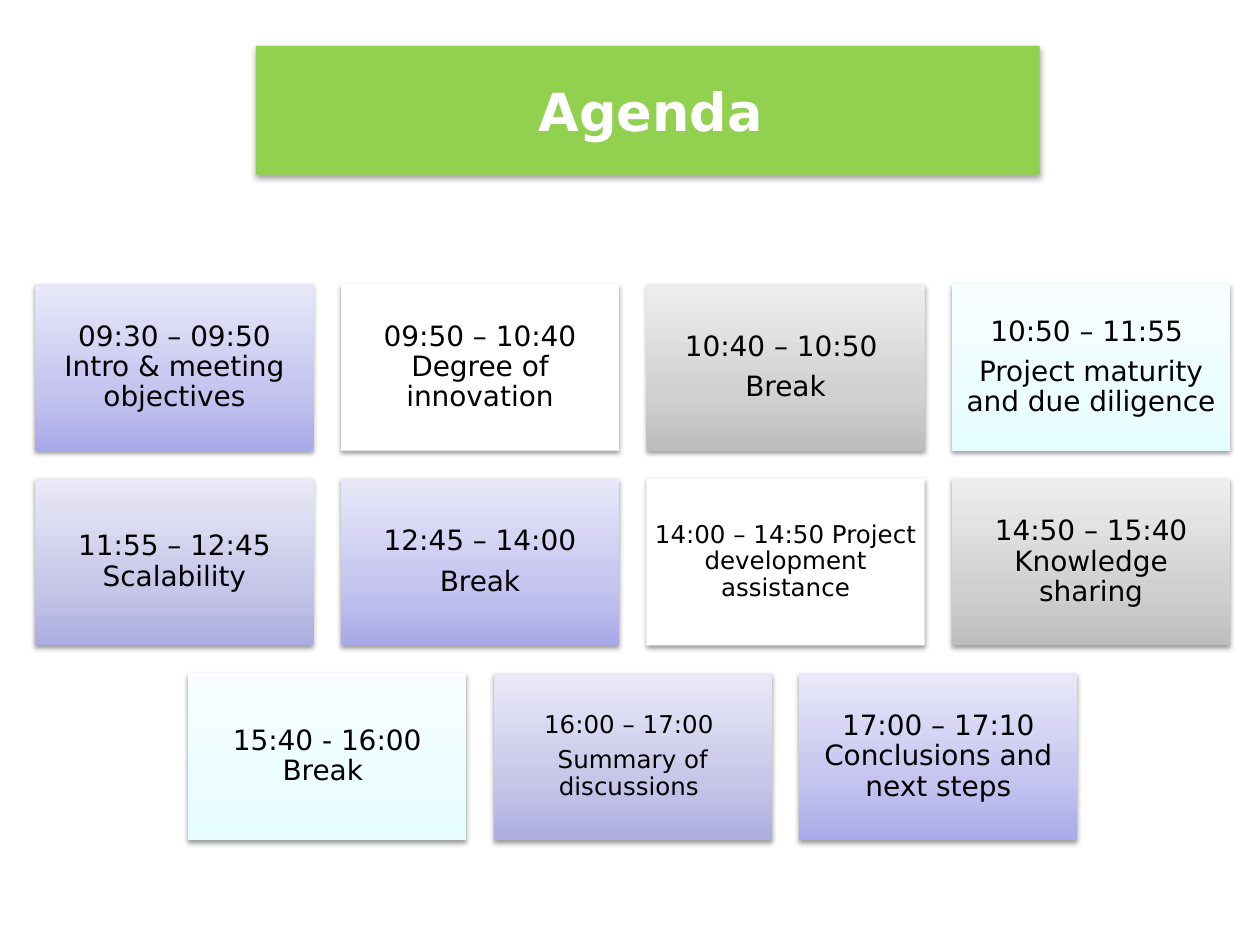
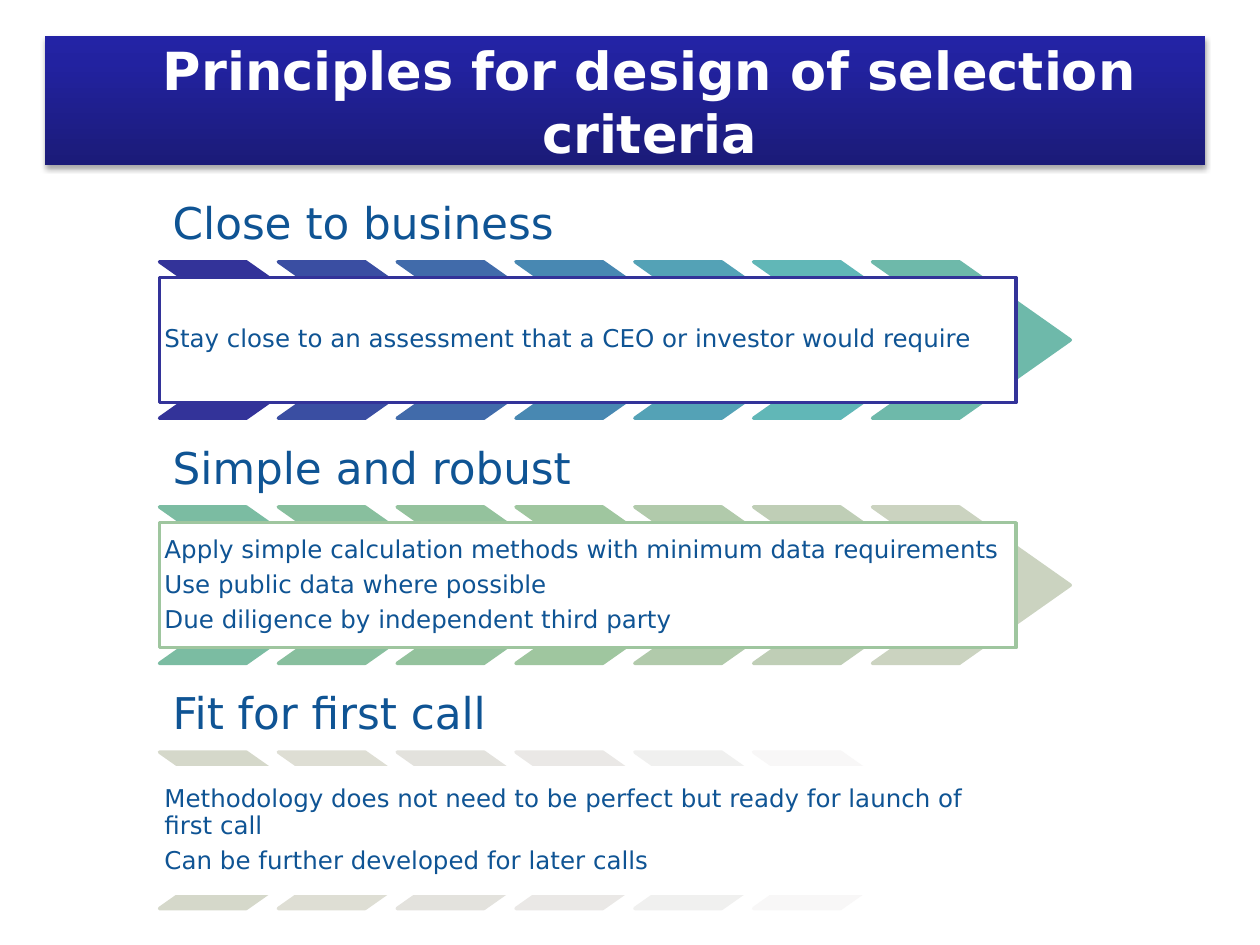
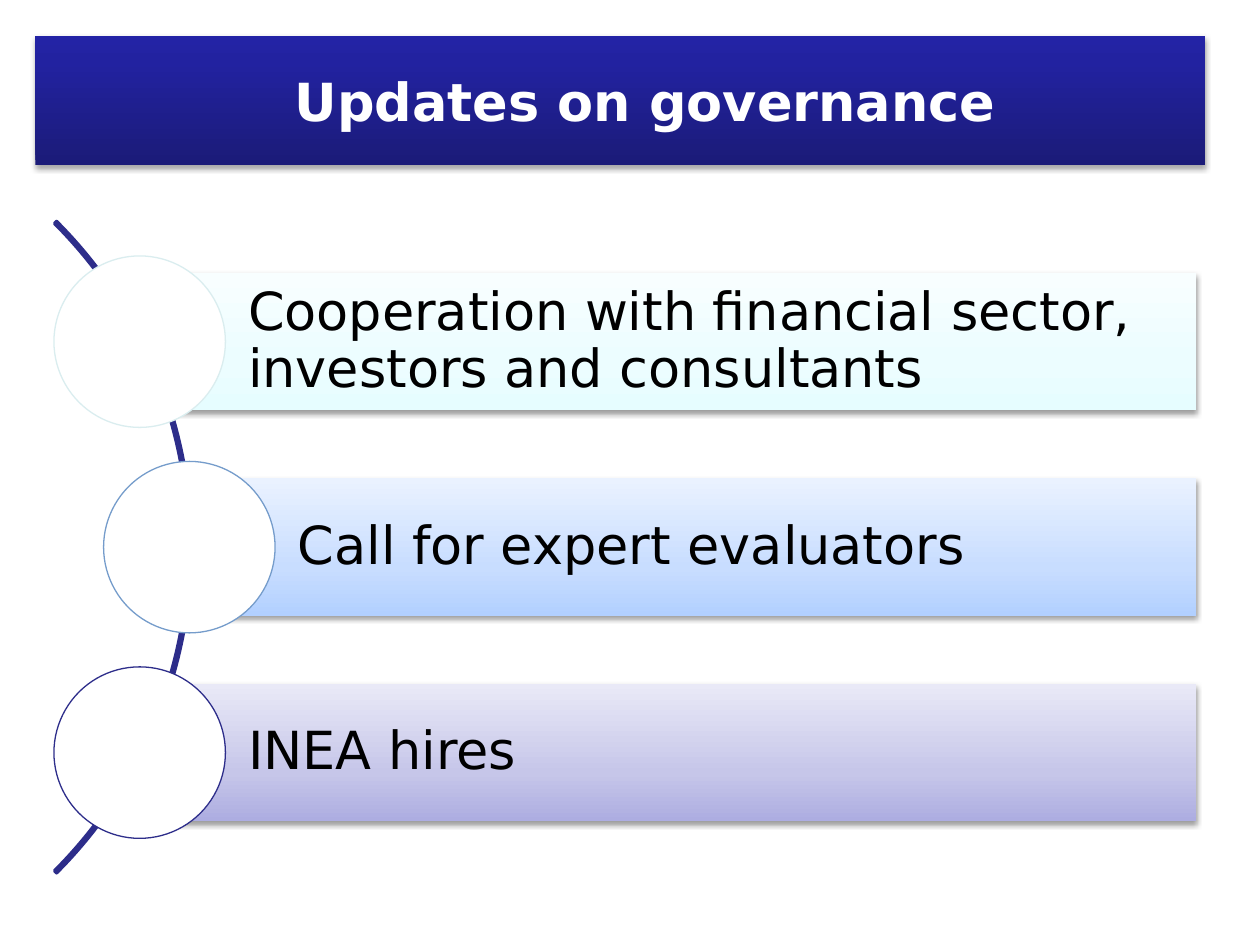
from pptx import Presentation
from pptx.dml.color import RGBColor
from pptx.enum.shapes import MSO_SHAPE as SHAPE
from pptx.enum.text import MSO_ANCHOR as ANCHOR, PP_ALIGN as ALIGN
from pptx.oxml import parse_xml
from pptx.oxml.ns import nsdecls, qn
from pptx.util import Pt

FONT = "DejaVu Sans"
WHITE = RGBColor(0xFF, 0xFF, 0xFF)
BLACK = RGBColor(0x00, 0x00, 0x00)
GREEN = RGBColor(0x92, 0xD0, 0x50)
TEXT_BLUE = RGBColor(0x0F, 0x54, 0x94)
ARC_BLUE = RGBColor(0x2D, 0x2D, 0x8A)
PALE_TEAL = RGBColor(0xDA, 0xED, 0xEF)
MID_BLUE = RGBColor(0x75, 0x9C, 0xCB)


def gradient(*stops):
    """Stops of (percent, colour), running from bottom to top."""
    return [(pos, RGBColor.from_string(c)) for pos, c in stops]


NAVY = gradient((0, "1B1B78"), (80, "2222A0"), (100, "2323A5"))
VIOLET = gradient((0, "A9A9E9"), (35, "C4C4EF"), (100, "E8E8FA"))
GREY = gradient((0, "BDBDBD"), (35, "D1D1D1"), (100, "EEEEEE"))
ICE = gradient((0, "E6FDFF"), (35, "ECFDFF"), (100, "F8FEFF"))
LILAC = gradient((0, "ADADE1"), (35, "C6C6E9"), (100, "E9E9F7"))
SKY = gradient((0, "B2D0FF"), (35, "C8DDFF"), (100, "EAF2FF"))

CHEVRON_ROWS = [
    [RGBColor.from_string(c) for c in row.split()] for row in (
        "333399 3A4EA2 416BAA 4888B2 54A2B6 61B7B7 6EB9AA",
        "7BBCA2 88BF9E 94C29D 9FC69F B1CAAB BFCEB6 CBD3C0",
        "D5D8CA DEDED4 E3E2DD EAE8E6 F0F0EF F8F7F7 FFFFFF")]


# Shared helpers
def add_shadow(sp, alpha, dist):
    effects = sp._element.spPr.find(qn("a:effectLst"))
    effects.append(parse_xml(
        f'<a:outerShdw {nsdecls("a")} blurRad="{Pt(3.1)}" dist="{Pt(dist)}" '
        f'dir="5400000" rotWithShape="0"><a:srgbClr val="000000">'
        f'<a:alpha val="{alpha * 1000}"/></a:srgbClr></a:outerShdw>'))


def set_fill(sp, fill):
    if fill is None:
        sp.fill.background()
    elif isinstance(fill, RGBColor):
        sp.fill.solid()
        sp.fill.fore_color.rgb = fill
    else:
        stops = "".join(f'<a:gs pos="{pos * 1000}"><a:srgbClr val="{c}"/></a:gs>'
                        for pos, c in fill)
        sp._element.spPr.find(qn("a:prstGeom")).addnext(parse_xml(
            f'<a:gradFill {nsdecls("a")} rotWithShape="1"><a:gsLst>{stops}</a:gsLst>'
            f'<a:lin ang="16200000" scaled="0"/></a:gradFill>'))


def add_box(slide, kind, box, fill, line=None, width=2):
    sp = slide.shapes.add_shape(kind, *(Pt(v) for v in box))
    set_fill(sp, fill)
    if line is None:
        sp.line.fill.background()
    else:
        sp.line.color.rgb = line
        sp.line.width = Pt(width)
    sp.shadow.inherit = False
    return sp


def write(sp, lines, size, color, inset, left=None, align=ALIGN.LEFT,
          anchor=ANCHOR.MIDDLE, bold=False, spacing=0.9, after=0.35):
    tf = sp.text_frame
    tf.word_wrap = True
    tf.vertical_anchor = anchor
    tf.margin_top = tf.margin_bottom = tf.margin_right = Pt(inset)
    tf.margin_left = Pt(inset if left is None else left)
    for i, line in enumerate(lines):
        p = tf.add_paragraph() if i else tf.paragraphs[0]
        p.text = line
        p.alignment = align
        p.line_spacing = spacing
        p.space_after = Pt(after * size)
        p.font.name, p.font.size, p.font.bold = FONT, Pt(size), bold
        p.font.color.rgb = color


def add_title(slide, text, box, fill, left):
    sp = add_box(slide, SHAPE.RECTANGLE, box, fill)
    add_shadow(sp, 35, 1.8)
    write(sp, [text], 30, WHITE, 3.6, left, ALIGN.CENTER, bold=True,
          spacing=1.0, after=0)


# Agenda: rows of cards, short rows centred
def add_agenda(slide, rows, left, top):
    card_w, card_h, step_x, step_y, columns = 159, 95.3, 174.6, 111.3, 4
    for r, row in enumerate(rows):
        start = left + (columns - len(row)) / 2 * step_x
        for c, (lines, fill, size) in enumerate(row):
            box = (start + c * step_x, top + r * step_y, card_w, card_h)
            sp = add_box(slide, SHAPE.RECTANGLE, box, fill)
            add_shadow(sp, 38, 1.6)
            write(sp, lines, size, BLACK, 0.3 * size, align=ALIGN.CENTER)


# Principle: heading, chevron strip and framed text
def add_principle(slide, heading, lines, colors, frame, left, top):
    sp = slide.shapes.add_textbox(Pt(left), Pt(top), Pt(483), Pt(43.9))
    write(sp, [heading], 25, TEXT_BLUE, 7.5, anchor=ANCHOR.BOTTOM)
    for i, color in enumerate(colors):
        box = (left + i * 67.9, top + 43.9, 113, 89.4)
        chevron = add_box(slide, SHAPE.CHEVRON, box, color, color)
        chevron.adjustments[0] = 0.71
    sp = add_box(slide, SHAPE.RECTANGLE, (left, top + 52.9, 489.5, 71.5), WHITE, frame)
    write(sp, lines, 14, TEXT_BLUE, 2.8)


# Governance: bars with circles along an arc
def add_updates(slide, items, right, top):
    bar_h, circle, step = 78.5, 98, 117.4
    diameter = 526.3
    middle = top + step + bar_h / 2
    arc = add_box(slide, SHAPE.BLOCK_ARC,
                  (-416.9, middle - diameter / 2, diameter, diameter), None, ARC_BLUE)
    for i, value in enumerate((189, 27, 0)):
        arc.adjustments[i] = value
    arc.adjustments[2] = 0.003
    for i, (text, left, fill, ring) in enumerate(items):
        y = top + i * step
        bar = add_box(slide, SHAPE.RECTANGLE, (left, y, right - left, bar_h), fill)
        add_shadow(bar, 38, 1.6)
        write(bar, [text], 30, BLACK, 6, left=62)
        add_box(slide, SHAPE.OVAL,
                (left - circle / 2, y + (bar_h - circle) / 2, circle, circle),
                WHITE, ring, 0.75)


def main():
    prs = Presentation()
    prs.slide_width, prs.slide_height = Pt(720), Pt(540)
    agenda, principles, governance = (
        prs.slides.add_slide(prs.slide_layouts[6]) for _ in range(3))

    add_title(agenda, "Agenda", (146.2, 26.2, 448, 73.7), GREEN, 7.2)
    add_agenda(agenda, [
        [(["09:30 – 09:50 Intro & meeting objectives"], VIOLET, 16),
         (["09:50 – 10:40 Degree of innovation"], WHITE, 16),
         (["10:40 – 10:50 ", "Break"], GREY, 16),
         (["10:50 – 11:55 ", "Project maturity and due diligence"], ICE, 16)],
        [(["11:55 – 12:45 Scalability"], LILAC, 16),
         (["12:45 – 14:00", "Break"], VIOLET, 16),
         (["14:00 – 14:50 Project development assistance"], WHITE, 14),
         (["14:50 – 15:40 Knowledge sharing"], GREY, 16)],
        [(["15:40 - 16:00 Break "], ICE, 16),
         (["16:00 – 17:00 ", "Summary of discussions "], LILAC, 14),
         (["17:00 – 17:10 Conclusions and next steps"], VIOLET, 16)],
    ], 20.2, 162.2)

    add_title(principles, "Principles for design of selection criteria",
              (25.5, 20.7, 663, 73.7), NAVY, 32)
    sections = [
        ("Close to business",
         ["Stay close to an assessment that a CEO or investor would require"], 0),
        ("Simple and robust",
         ["Apply simple calculation methods with minimum data requirements",
          "Use public data where possible",
          "Due diligence by independent third party"], 3),
        ("Fit for first call",
         ["Methodology does not need to be perfect but ready for launch of first call",
          "Can be further developed for later calls"], 6)]
    for i, (heading, lines, frame) in enumerate(sections):
        colors = CHEVRON_ROWS[i]
        add_principle(principles, heading, lines, colors, colors[frame],
                      91.2, 105.7 + i * 140.1)

    add_title(governance, "Updates on governance", (20.2, 20.7, 668.6, 73.7), NAVY, 32)
    add_updates(governance, [
        ("Cooperation with financial sector, investors and consultants",
         79.8, ICE, PALE_TEAL),
        ("Call for expert evaluators", 108.2, SKY, MID_BLUE),
        ("INEA hires", 79.8, LILAC, ARC_BLUE),
    ], 683.4, 156)

    prs.save("out.pptx")


if __name__ == "__main__":
    main()
